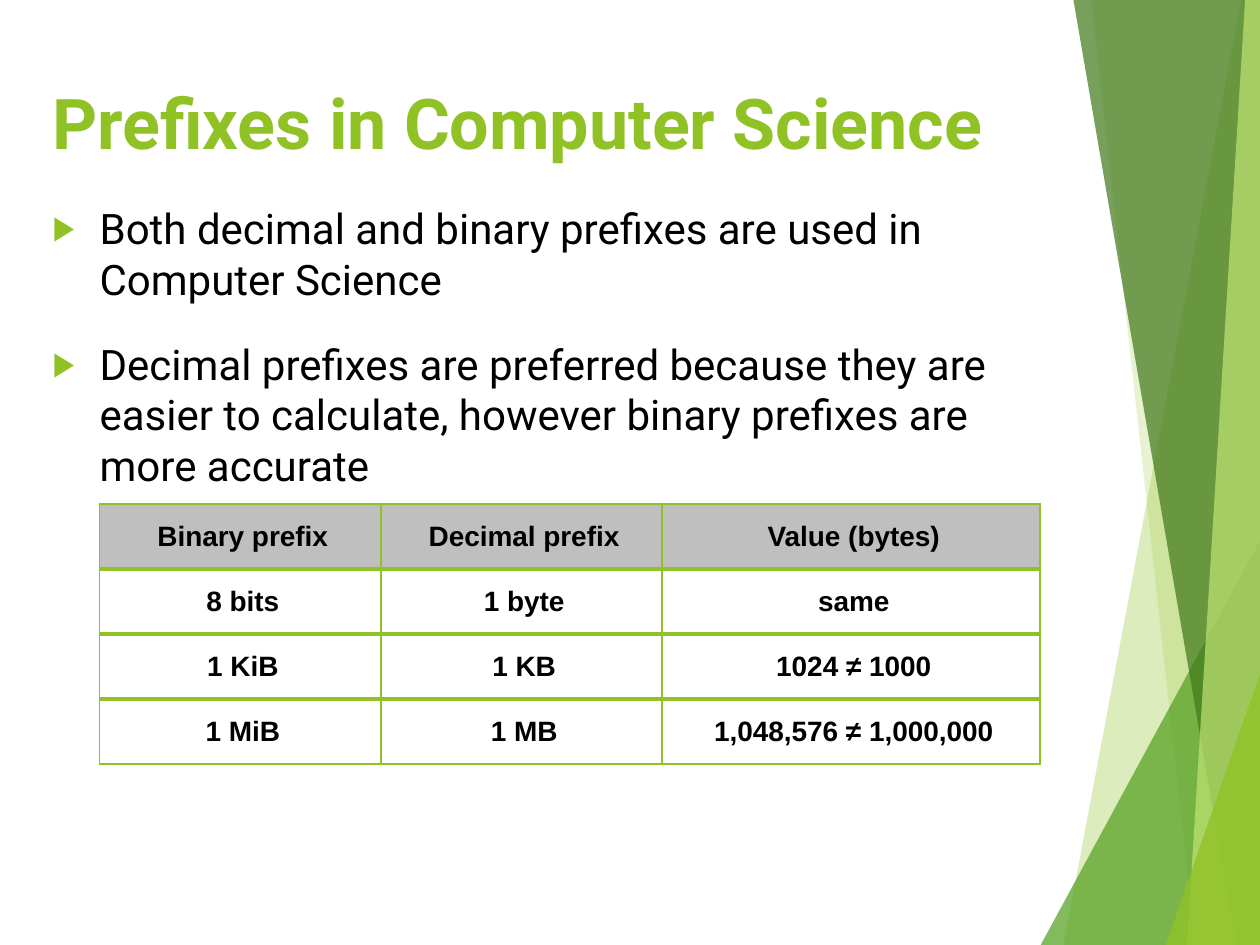
from pptx import Presentation as Deck
from pptx.dml.color import RGBColor as Color
from pptx.enum.text import MSO_ANCHOR as Anchor, PP_ALIGN as Align
from pptx.oxml.ns import qn
from pptx.util import Cm, Pt
from lxml.etree import SubElement as Sub

LIME = Color(0x90, 0xC2, 0x26)
GREEN = Color(0x54, 0xA0, 0x21)
DARK = Color(0x3F, 0x78, 0x19)
PALE = Color(0xC0, 0xE4, 0x74)
GREY = Color(0xBF, 0xBF, 0xBF)
BLACK = Color(0, 0, 0)

WIDE, HIGH = 25.4, 19.05
FACETS = [
    ([(25.02, 0), (21.44, HIGH), (WIDE, HIGH), (WIDE, 0)], LIME, 30),
    ([(22, 0), (24.1, HIGH), (WIDE, HIGH), (WIDE, 0)], LIME, 20),
    ([(20.98, HIGH), (WIDE, 10.9), (WIDE, HIGH)], GREEN, 72),
    ([(21.64, 0), (24.92, HIGH), (WIDE, HIGH), (WIDE, 0)], DARK, 70),
    ([(25.1, 0), (23.93, HIGH), (WIDE, HIGH), (WIDE, 0)], PALE, 70),
    ([(23.5, HIGH), (WIDE, 13.59), (WIDE, HIGH)], LIME, 80),
]
TITLE = "Prefixes in Computer Science"
POINTS = [
    "Both decimal and binary prefixes are used in Computer Science",
    "Decimal prefixes are preferred because they are easier to calculate, "
    "however binary prefixes are more accurate",
]
ROWS = [
    ["Binary prefix", "Decimal prefix", "Value (bytes)"],
    ["8 bits", "1 byte", "same"],
    ["1 KiB", "1 KB", "1024 ≠ 1000"],
    ["1 MiB", "1 MB", "1,048,576 ≠ 1,000,000"],
]
COLS = [5.67, 5.67, 7.62]
ROW = 1.31


def write(para, text, size, font="Roboto", color=BLACK, bold=False,
          align=Align.LEFT, before=0):
    para.alignment = align
    para.space_before = Pt(before)
    run = para.add_run()
    run.text = text
    run.font.name = font
    run.font.size = Pt(size)
    run.font.bold = bold
    run.font.color.rgb = color


def indent(para, left, first=0):
    props = para._p.get_or_add_pPr()
    props.set("marL", str(Cm(left)))
    props.set("indent", str(Cm(first)))
    return props


def bullet(para):
    props = indent(para, 0.95, -0.95)
    tint = Sub(props, qn("a:buClr"))
    Sub(tint, qn("a:srgbClr"), val=str(LIME))
    Sub(props, qn("a:buSzPct"), val="80000")
    Sub(props, qn("a:buFont"), typeface="Arial")
    Sub(props, qn("a:buChar"), char="▶")


def facet(slide, points, color, alpha):
    spots = [(Cm(x), Cm(y)) for x, y in points]
    pen = slide.shapes.build_freeform(*spots[0])
    pen.add_line_segments(spots[1:])
    shape = pen.convert_to_shape()
    shape.shadow.inherit = False
    shape.line.fill.background()
    shape.fill.solid()
    shape.fill.fore_color.rgb = color
    tone = shape._element.spPr.find(".//" + qn("a:srgbClr"))
    Sub(tone, qn("a:alpha"), val=str(alpha * 1000))


def box(slide, top, height, anchor):
    frame = slide.shapes.add_textbox(
        Cm(0.81), Cm(top), Cm(20.17), Cm(height)).text_frame
    frame.word_wrap = True
    frame.vertical_anchor = anchor
    return frame


def border(cell, side, width):
    line = Sub(cell._tc.get_or_add_tcPr(), qn("a:ln" + side),
               w=str(Pt(width)))
    Sub(Sub(line, qn("a:solidFill")), qn("a:srgbClr"), val=str(LIME))


def fill_cell(cell, text, row):
    head, last = row == 0, row == len(ROWS) - 1
    for side, width in [("L", 1), ("R", 1), ("T", 1 if head else 3),
                        ("B", 1 if last else 3)]:
        border(cell, side, width)
    if head:
        cell.fill.solid()
        cell.fill.fore_color.rgb = GREY
    else:
        cell.fill.background()
    cell.vertical_anchor = Anchor.MIDDLE
    cell.margin_left = cell.margin_right = Cm(0.15)
    cell.margin_top = cell.margin_bottom = Cm(0.15)
    para = cell.text_frame.paragraphs[0]
    write(para, text, 16, font="Arial", bold=True, align=Align.CENTER)
    indent(para, 0.1)


def grid(slide):
    table = slide.shapes.add_table(
        len(ROWS), len(COLS), Cm(2.01), Cm(10.16),
        Cm(sum(COLS)), Cm(ROW * len(ROWS))).table
    table.first_row = table.horz_banding = False
    for col, width in zip(table.columns, COLS):
        col.width = Cm(width)
    for r, texts in enumerate(ROWS):
        table.rows[r].height = Cm(ROW)
        for c, text in enumerate(texts):
            fill_cell(table.cell(r, c), text, r)


def main():
    deck = Deck()
    deck.slide_width, deck.slide_height = Cm(WIDE), Cm(HIGH)
    slide = deck.slides.add_slide(deck.slide_layouts[6])
    for points, color, alpha in FACETS:
        facet(slide, points, color, alpha)
    head = box(slide, 0.94, 3.02, Anchor.MIDDLE)
    write(head.paragraphs[0], TITLE, 40, color=LIME, bold=True)
    body = box(slide, 3.96, 13.31, Anchor.TOP)
    for i, text in enumerate(POINTS):
        para = body.add_paragraph() if i else body.paragraphs[0]
        write(para, text, 24, before=20)
        bullet(para)
    grid(slide)
    deck.save("out.pptx")


if __name__ == "__main__":
    main()
